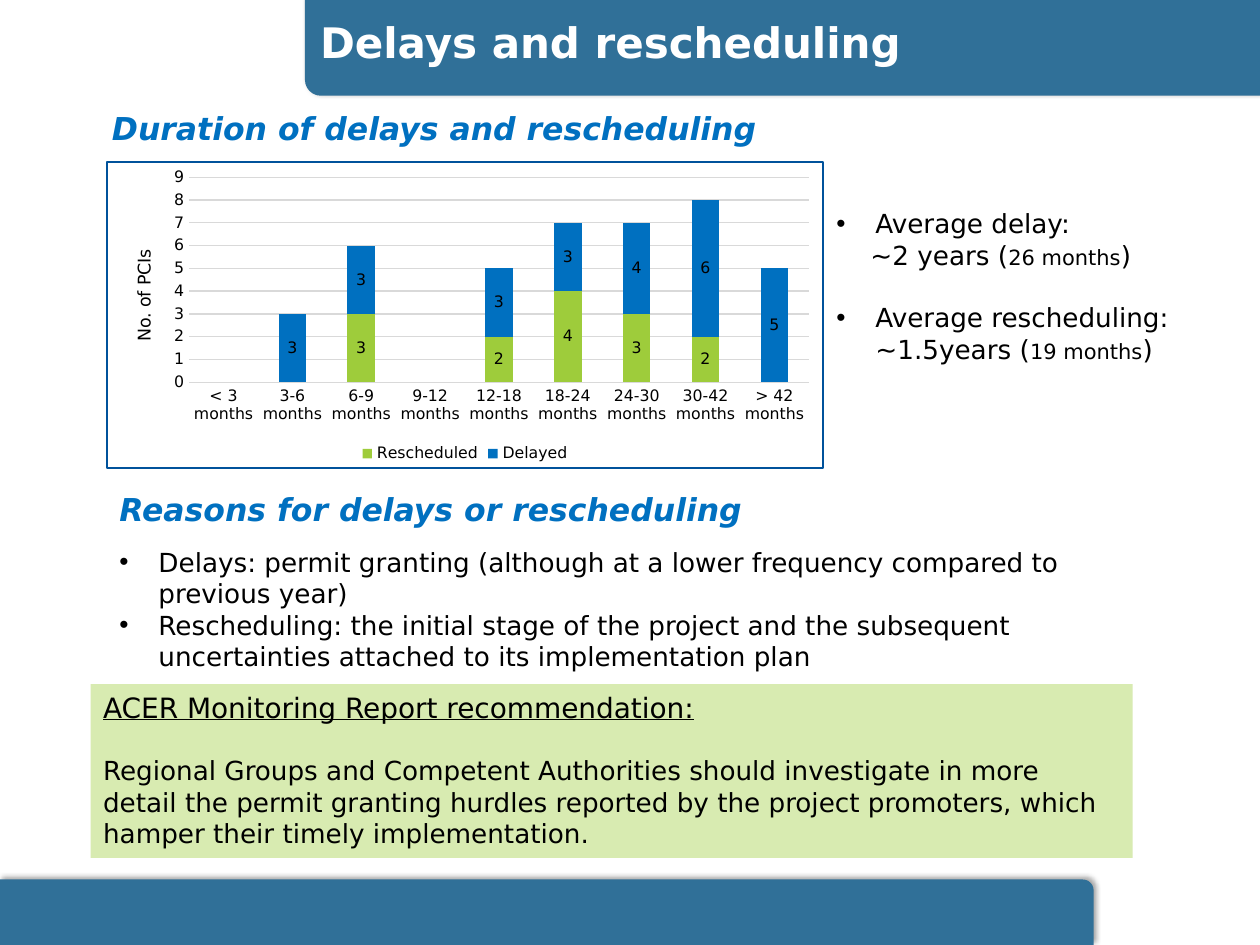
from lxml.etree import SubElement
from pptx import Presentation
from pptx.chart.data import CategoryChartData
from pptx.dml.color import RGBColor
from pptx.enum.chart import XL_CHART_TYPE, XL_LABEL_POSITION, XL_LEGEND_POSITION, XL_TICK_MARK
from pptx.enum.shapes import MSO_SHAPE
from pptx.enum.text import MSO_ANCHOR, PP_ALIGN
from pptx.oxml import parse_xml
from pptx.oxml.ns import nsdecls, qn
from pptx.util import Inches, Pt

# Content
TITLE = "Delays and rescheduling"
DURATION_HEADING = "Duration of delays and rescheduling"
AXIS_TITLE = "No. of PCIs"
DURATIONS = ["< 3", "3-6", "6-9", "9-12", "12-18", "18-24", "24-30", "30-42", "> 42"]
COUNTS = [
    ("Rescheduled", "rescheduled", [None, None, 3, None, 2, 4, 3, 2, None]),
    ("Delayed", "delayed", [None, 3, 3, None, 3, 3, 4, 6, 5]),
]
# Paragraphs: style, space before in points, (text, size) runs
AVERAGES = [
    ("bullet", 0, [("Average delay:", "body")]),
    ("indented", 0, [("~2 years (", "body"), ("26 months", "detail"), (")", "body")]),
    ("bullet", 17.5, [("Average rescheduling: ~1.5years (", "body"),
                      ("19 months", "detail"), (")", "body")]),
]
REASONS = [
    ("heading", 0, [("Reasons for delays or rescheduling", "heading")]),
    ("bullet", 10.5, [("Delays: permit granting (although at a lower frequency "
                       "compared to previous year)", "body")]),
    ("bullet", 0, [("Rescheduling: the initial stage of the project and the subsequent "
                    "uncertainties attached to its implementation plan", "body")]),
]
RECOMMENDATION = [
    ("underlined", 0, [("ACER Monitoring Report recommendation:", "lead")]),
    ("plain", 17.5, [("Regional Groups and Competent Authorities should investigate in more "
                      "detail the permit granting hurdles reported by the project promoters, "
                      "which hamper their timely implementation.", "body")]),
]

# Theme
THEME = {
    "font": "DejaVu Sans",
    "colors": {"band": "307098", "accent": "0070C0", "text": "000000", "white": "FFFFFF",
               "note": "D8EBB1", "grid": "D9D9D9", "border": "00529B",
               "rescheduled": "9ECC3B", "delayed": "0070C0"},
    "sizes": {"title": 24, "heading": 18, "lead": 16, "body": 15, "detail": 12,
              "chart": 10, "axis": 9},
}
STYLES = {
    "heading": {"color": "accent", "bold": True, "italic": True},
    "bullet": {},
    "indented": {},
    "underlined": {"underline": True},
    "plain": {},
}
INDENTS = {"bullet": (0.31, -0.31), "indented": (0.27, 0)}
BANDS = [((0, 6.98, 8.68, 0.52), 0), ((2.42, 0, 7.58, 0.76), 180)]


def rgb(name):
    return RGBColor.from_string(THEME["colors"][name])


def apply(target, **values):
    for name, value in values.items():
        setattr(target, name, value)


def set_font(font, size, color="text", **values):
    apply(font, name=THEME["font"], size=Pt(THEME["sizes"][size]), **values)
    font.color.rgb = rgb(color)


def place(box):
    return [Inches(length) for length in box]


def paint(shape, color):
    shape.shadow.inherit = False
    shape.fill.solid()
    shape.fill.fore_color.rgb = rgb(color)
    shape.line.fill.background()


def write(frame, paragraphs, wrap=True):
    apply(frame, word_wrap=wrap, vertical_anchor=MSO_ANCHOR.TOP)
    for index, (style, before, runs) in enumerate(paragraphs):
        paragraph = frame.paragraphs[0] if index == 0 else frame.add_paragraph()
        apply(paragraph, alignment=PP_ALIGN.LEFT, space_before=Pt(before))
        if style in INDENTS:
            left, first = INDENTS[style]
            props = paragraph._p.get_or_add_pPr()
            props.set("marL", str(Inches(left)))
            props.set("indent", str(Inches(first)))
            if style == "bullet":
                SubElement(props, qn("a:buFont"), typeface="Arial")
                SubElement(props, qn("a:buChar"), char="•")
        for text, size in runs:
            run = paragraph.add_run()
            run.text = text
            set_font(run.font, size, **STYLES[style])


def add_text(slide, box, paragraphs, wrap=True):
    write(slide.shapes.add_textbox(*place(box)).text_frame, paragraphs, wrap)


def add_bands(slide):
    for box, rotation in BANDS:
        band = slide.shapes.add_shape(MSO_SHAPE.ROUND_1_RECTANGLE, *place(box))
        paint(band, "band")
        band.rotation = rotation
        effects = band._element.spPr.find(qn("a:effectLst"))
        effects.append(parse_xml(
            f'<a:outerShdw {nsdecls("a")} blurRad="{Pt(3.1)}" dist="{Pt(1.8)}" '
            f'dir="{306 * 60000}" rotWithShape="0"><a:srgbClr val="000000">'
            '<a:alpha val="35000"/></a:srgbClr></a:outerShdw>'))


def add_title(slide):
    title = slide.shapes.title
    left, top, width, height = place((2.44, 0.13, 7.56, 0.67))
    apply(title, left=left, top=top, width=width, height=height, text=TITLE)
    apply(title.text_frame, vertical_anchor=MSO_ANCHOR.TOP, word_wrap=True)
    paragraph = title.text_frame.paragraphs[0]
    apply(paragraph, alignment=PP_ALIGN.LEFT, line_spacing=0.9)
    set_font(paragraph.runs[0].font, "title", "white", bold=True)
    slide.shapes._spTree.append(title._element)  # in front of the bands


def add_delay_chart(slide):
    data = CategoryChartData()
    data.categories = [f"{duration} months" for duration in DURATIONS]
    for name, _, values in COUNTS:
        data.add_series(name, values)
    chart = slide.shapes.add_chart(
        XL_CHART_TYPE.COLUMN_STACKED, *place((0.84, 1.28, 5.7, 2.44)), data).chart
    set_font(chart.font, "chart")
    apply(chart, has_title=False, has_legend=True)
    apply(chart.legend, position=XL_LEGEND_POSITION.BOTTOM, include_in_layout=False)
    set_font(chart.legend.font, "axis")

    # Columns and labels
    plot = chart.plots[0]
    apply(plot, gap_width=150, overlap=100, vary_by_categories=False)
    for series, (_, color, _) in zip(plot.series, COUNTS):
        series.format.fill.solid()
        series.format.fill.fore_color.rgb = rgb(color)
        apply(series.data_labels, show_value=True, position=XL_LABEL_POSITION.CENTER)
        set_font(series.data_labels.font, "axis")

    # Axes
    months, counts = chart.category_axis, chart.value_axis
    for axis in (months, counts):
        apply(axis, major_tick_mark=XL_TICK_MARK.NONE, minor_tick_mark=XL_TICK_MARK.NONE)
        set_font(axis.tick_labels.font, "axis")
    apply(counts, minimum_scale=0, maximum_scale=9, major_unit=1, has_major_gridlines=True)
    counts.format.line.fill.background()
    for line in (months.format.line, counts.major_gridlines.format.line):
        line.color.rgb = rgb("grid")
        line.width = Pt(0.75)
    axis_title = counts.axis_title.text_frame
    axis_title.text = AXIS_TITLE
    set_font(axis_title.paragraphs[0].runs[0].font, "chart", bold=False)

    # Plot position, background and border
    area = chart._chartSpace.chart.plotArea
    for old in area.findall(qn("c:layout")):
        area.remove(old)
    area.insert(0, parse_xml(
        f'<c:layout {nsdecls("c")}><c:manualLayout><c:layoutTarget val="inner"/>'
        '<c:xMode val="edge"/><c:yMode val="edge"/><c:x val="0.115"/><c:y val="0.05"/>'
        '<c:w val="0.865"/><c:h val="0.67"/></c:manualLayout></c:layout>'))
    colors = THEME["colors"]
    chart._chartSpace.chart.addnext(parse_xml(
        f'<c:spPr {nsdecls("c", "a")}><a:solidFill><a:srgbClr val="{colors["white"]}"/>'
        f'</a:solidFill><a:ln w="{Pt(1)}"><a:solidFill><a:srgbClr val="{colors["border"]}"/>'
        '</a:solidFill></a:ln></c:spPr>'))


def main():
    deck = Presentation()
    apply(deck, slide_width=Inches(10), slide_height=Inches(7.5))
    slide = deck.slides.add_slide(deck.slide_layouts[5])
    add_bands(slide)
    add_title(slide)
    add_text(slide, (0.79, 0.82, 5.33, 0.4),
             [("heading", 0, [(DURATION_HEADING, "heading")])], wrap=False)
    add_delay_chart(slide)
    add_text(slide, (0.85, 3.84, 8.14, 1.58), REASONS)
    note = slide.shapes.add_shape(MSO_SHAPE.RECTANGLE, *place((0.72, 5.43, 8.27, 1.38)))
    paint(note, "note")
    write(note.text_frame, RECOMMENDATION)
    add_text(slide, (6.54, 1.6, 3.3, 1.36), AVERAGES)
    deck.save("out.pptx")


if __name__ == "__main__":
    main()
